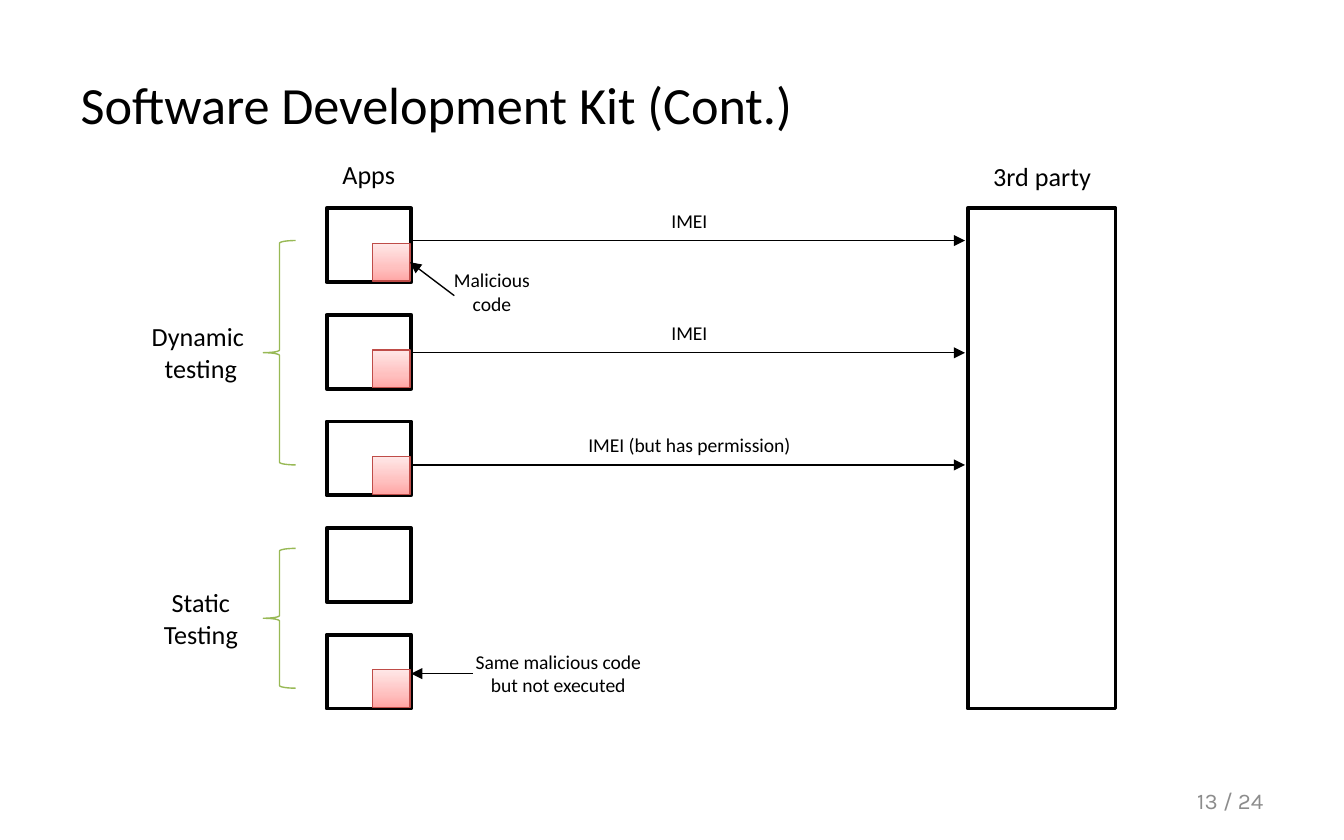
from copy import deepcopy
from dataclasses import dataclass

from lxml.etree import SubElement
from pptx import Presentation
from pptx.dml.color import RGBColor
from pptx.enum.shapes import MSO_CONNECTOR, MSO_SHAPE
from pptx.enum.text import MSO_ANCHOR, PP_ALIGN
from pptx.oxml.ns import qn
from pptx.shapes.autoshape import Shape
from pptx.shapes.connector import Connector
from pptx.slide import Slide
from pptx.text.text import TextFrame
from pptx.util import Pt

BLACK = RGBColor(0x00, 0x00, 0x00)
WHITE = RGBColor(0xFF, 0xFF, 0xFF)
GREEN = RGBColor(0x98, 0xB9, 0x55)
RED = RGBColor(0xBF, 0x4C, 0x48)
GRAY = RGBColor(0x8C, 0x8C, 0x8C)
CODE_STOPS = (
    (0, RGBColor(0xFF, 0xA6, 0xA5)),
    (0.35, RGBColor(0xFF, 0xC0, 0xBF)),
    (1, RGBColor(0xFF, 0xE7, 0xE7)),
)

APP_LEFT, APP_TOP, APP_WIDTH, APP_HEIGHT = 175, 111.6, 45.3, 39.6
APP_RIGHT = APP_LEFT + APP_WIDTH
APP_PITCH = 57.1
APP_COUNT = 5
CODE_SIZE = 20.2
CODE_INSET = 0.6
INFECTED_APPS = (0, 1, 2, 4)
PARTY_LEFT = 518.4
MESSAGE_TOP, MESSAGE_PITCH = 128.9, 60.1
MESSAGES = ("IMEI", "IMEI", "IMEI (but has permission)")


@dataclass(frozen=True)
class Area:
    left: float
    top: float
    width: float
    height: float


@dataclass(frozen=True)
class Label:
    """Text with one entry per paragraph; a newline is a line break."""
    area: Area
    paragraphs: tuple[str, ...]
    size: float
    font: str = "Calibri"
    color: RGBColor = BLACK
    align: PP_ALIGN = PP_ALIGN.CENTER


LABELS = (
    Label(Area(147.6, 81.4, 100, 24.2), ("Apps",), 14),
    Label(Area(508.3, 82.1, 100, 24.2), ("3rd party",), 14),
    Label(Area(57.6, 168, 100, 41.2), ("Dynamic \ntesting",), 14),
    Label(Area(57.6, 310.5, 100, 41.2), ("Static", "Testing"), 14),
    Label(Area(235.4, 139.8, 56.2, 32.7), ("Malicious ", "code"), 10.5),
    Label(Area(244, 344.2, 110.2, 32.7),
          ("Same malicious code but not executed",), 10.5),
    Label(Area(516.2, 416.9, 167.8, 23.8), ("13 / 24",), 12, "Karla", GRAY,
          PP_ALIGN.RIGHT),
)
BRACES = (Area(141.1, 128.9, 17.3, 120.2), Area(141.1, 293.8, 17.3, 74.9))


def fill_text(frame: TextFrame, label: Label) -> None:
    frame.word_wrap = True
    frame.vertical_anchor = MSO_ANCHOR.MIDDLE
    for index, text in enumerate(label.paragraphs):
        para = frame.paragraphs[0] if index == 0 else frame.add_paragraph()
        para.alignment = label.align
        for row, part in enumerate(text.split("\n")):
            if row:
                para.add_line_break()
            span = para.add_run()
            span.text = part
            span.font.size = Pt(label.size)
            span.font.name = label.font
            span.font.color.rgb = label.color


def add_label(page: Slide, label: Label) -> None:
    area = label.area
    box = page.shapes.add_textbox(
        Pt(area.left), Pt(area.top), Pt(area.width), Pt(area.height))
    fill_text(box.text_frame, label)


def add_outline(page: Slide, kind: MSO_SHAPE, area: Area, color: RGBColor,
                weight: float) -> Shape:
    """Add an unfilled preset shape without a shadow."""
    shape = page.shapes.add_shape(
        kind, Pt(area.left), Pt(area.top), Pt(area.width), Pt(area.height))
    shape.shadow.inherit = False
    shape.fill.background()
    shape.line.color.rgb = color
    shape.line.width = Pt(weight)
    return shape


def add_box(page: Slide, area: Area) -> None:
    box = add_outline(page, MSO_SHAPE.RECTANGLE, area, BLACK, 2)
    box.fill.solid()
    box.fill.fore_color.rgb = WHITE


def add_code(page: Slide, app_top: float) -> Shape:
    """Add the malicious code square in the lower right corner of an app."""
    offset = CODE_SIZE + CODE_INSET
    area = Area(APP_RIGHT - offset, app_top + APP_HEIGHT - offset,
                CODE_SIZE, CODE_SIZE)
    square = add_outline(page, MSO_SHAPE.RECTANGLE, area, RED, 0.75)
    square.fill.gradient()
    square.fill.gradient_angle = 90
    stop_list = next(square.element.iter(qn("a:gsLst")))
    stop_list.append(deepcopy(stop_list[0]))
    for stop, (position, color) in zip(square.fill.gradient_stops, CODE_STOPS):
        stop.position = position
        stop.color.rgb = color
    return square


def add_arrow(page: Slide, start: tuple[float, float],
              end: tuple[float, float]) -> Connector:
    arrow = page.shapes.add_connector(
        MSO_CONNECTOR.STRAIGHT, *(Pt(value) for value in start + end))
    arrow.line.color.rgb = BLACK
    arrow.line.width = Pt(0.75)
    SubElement(arrow.line._get_or_add_ln(), qn("a:tailEnd"), type="triangle")
    SubElement(arrow.element.spPr, qn("a:effectLst"))
    return arrow


def main() -> None:
    deck = Presentation()
    deck.slide_width, deck.slide_height = Pt(720), Pt(450)
    page = deck.slides.add_slide(deck.slide_layouts[5])

    title = page.shapes.title
    title.left, title.top, title.width, title.height = (
        Pt(36), Pt(18), Pt(648), Pt(75))
    fill_text(title.text_frame, Label(
        Area(36, 18, 648, 75), ("Software Development Kit (Cont.)",), 28,
        align=PP_ALIGN.LEFT))

    app_tops = [APP_TOP + index * APP_PITCH for index in range(APP_COUNT)]
    for top in app_tops:
        add_box(page, Area(APP_LEFT, top, APP_WIDTH, APP_HEIGHT))
    party_height = app_tops[-1] + APP_HEIGHT - APP_TOP
    add_box(page, Area(PARTY_LEFT, APP_TOP, 79.2, party_height))
    codes = [add_code(page, app_tops[index]) for index in INFECTED_APPS]

    for index, message in enumerate(MESSAGES):
        middle = MESSAGE_TOP + index * MESSAGE_PITCH
        add_arrow(page, (APP_RIGHT, middle), (PARTY_LEFT - 1.4, middle))
        add_label(page, Label(
            Area(262, middle - 20.9, 214.6, 20.2), (message,), 10.5))

    for area in BRACES:
        add_outline(page, MSO_SHAPE.LEFT_BRACE, area, GREEN, 0.75)
    add_arrow(page, (253.4, 360.9), (APP_RIGHT, 360.9))
    code_arrow = add_arrow(page, (243.4, 158.4), (219, 140.4))
    code_arrow.end_connect(codes[0], 3)
    for label in LABELS:
        add_label(page, label)

    deck.save("out.pptx")


if __name__ == "__main__":
    main()
